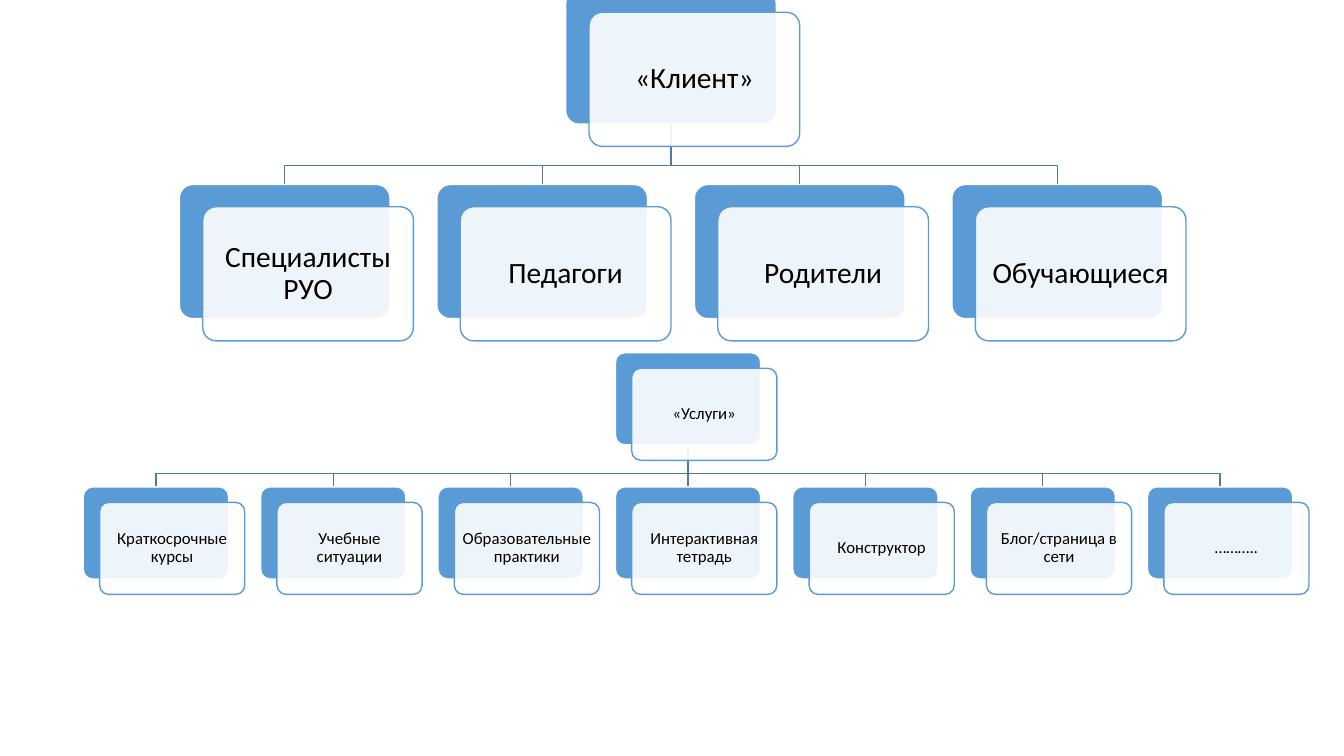
from pptx import Presentation
from pptx.dml.color import RGBColor
from pptx.enum.shapes import MSO_CONNECTOR, MSO_SHAPE
from pptx.enum.text import MSO_ANCHOR, PP_ALIGN
from pptx.oxml.ns import qn
from pptx.util import Cm, Pt
from lxml.etree import SubElement

COLORS = {"blue": "5B9BD5", "link": "497CAB", "white": "FFFFFF", "text": "000000"}

# Lengths in cm; "center" is the middle of the root's back plate
TREES = [
    {"root": "«Клиент»",
     "children": ["Специалисты РУО", "Педагоги", "Родители", "Обучающиеся"],
     "center": 16.91, "root_top": -0.25, "bus": 4.17, "child_top": 4.65,
     "step": 6.49, "width": 5.31, "height": 3.38, "dx": 0.59, "dy": 0.56,
     "margin": 0.22, "size": 21},
    {"root": "«Услуги»",
     "children": ["Краткосрочные курсы", "Учебные ситуации",
                  "Образовательные практики", "Интерактивная тетрадь",
                  "Конструктор", "Блог/страница в сети", "……….."],
     "center": 17.34, "root_top": 8.89, "bus": 11.93, "child_top": 12.27,
     "step": 4.47, "width": 3.66, "height": 2.32, "dx": 0.41, "dy": 0.39,
     "margin": 0.12, "size": 12},
]


def color(name):
    return RGBColor.from_string(COLORS[name])


def add_node(shapes, tree, text, center, top):
    """Draw a blue back plate and the translucent text card shifted over it."""
    left = center - tree["width"] / 2
    for shift, fill, line in ((0, "blue", "white"), (1, "white", "blue")):
        sp = shapes.add_shape(
            MSO_SHAPE.ROUNDED_RECTANGLE,
            Cm(left + shift * tree["dx"]), Cm(top + shift * tree["dy"]),
            Cm(tree["width"]), Cm(tree["height"]))
        sp.adjustments[0] = 0.1
        sp.shadow.inherit = False
        sp.fill.solid()
        sp.fill.fore_color.rgb = color(fill)
        sp.line.color.rgb = color(line)
        sp.line.width = Pt(1)
    card_color = sp.fill._xPr.find(qn("a:solidFill"))[0]
    SubElement(card_color, qn("a:alpha"), val="90000")

    tf = sp.text_frame
    tf.word_wrap = True
    tf.vertical_anchor = MSO_ANCHOR.MIDDLE
    for side in ("left", "right", "top", "bottom"):
        setattr(tf, f"margin_{side}", Cm(tree["margin"]))
    p = tf.paragraphs[0]
    p.alignment = PP_ALIGN.CENTER
    p.line_spacing = 0.9
    r = p.add_run()
    r.text = text
    for name, value in {"name": "Calibri", "size": Pt(tree["size"])}.items():
        setattr(r.font, name, value)
    r.font.color.rgb = color("text")


prs = Presentation()
prs.slide_width, prs.slide_height = Cm(33.87), Cm(19.05)
s = prs.slides.add_slide(prs.slide_layouts[6])

for tree in TREES:
    shapes = s.shapes.add_group_shape().shapes
    children = tree["children"]
    middle = (len(children) - 1) / 2
    centers = [tree["center"] + (i - middle) * tree["step"]
               for i in range(len(children))]
    root_x, bus_y = Cm(tree["center"]), Cm(tree["bus"])
    start_y = Cm(tree["root_top"] + tree["height"])
    end_y = Cm(tree["child_top"])

    for center in centers:
        x = Cm(center)
        if x == root_x:
            link = shapes.add_connector(
                MSO_CONNECTOR.STRAIGHT, root_x, start_y, x, end_y)
            SubElement(link._element.spPr, qn("a:effectLst"))
        else:
            path = shapes.build_freeform(root_x, start_y)
            path.add_line_segments(
                [(root_x, bus_y), (x, bus_y), (x, end_y)], close=False)
            link = path.convert_to_shape()
            link.fill.background()
            link.shadow.inherit = False
        link.line.color.rgb = color("link")
        link.line.width = Pt(1)

    add_node(shapes, tree, tree["root"], tree["center"], tree["root_top"])
    for text, center in zip(children, centers):
        add_node(shapes, tree, text, center, tree["child_top"])

prs.save("out.pptx")
